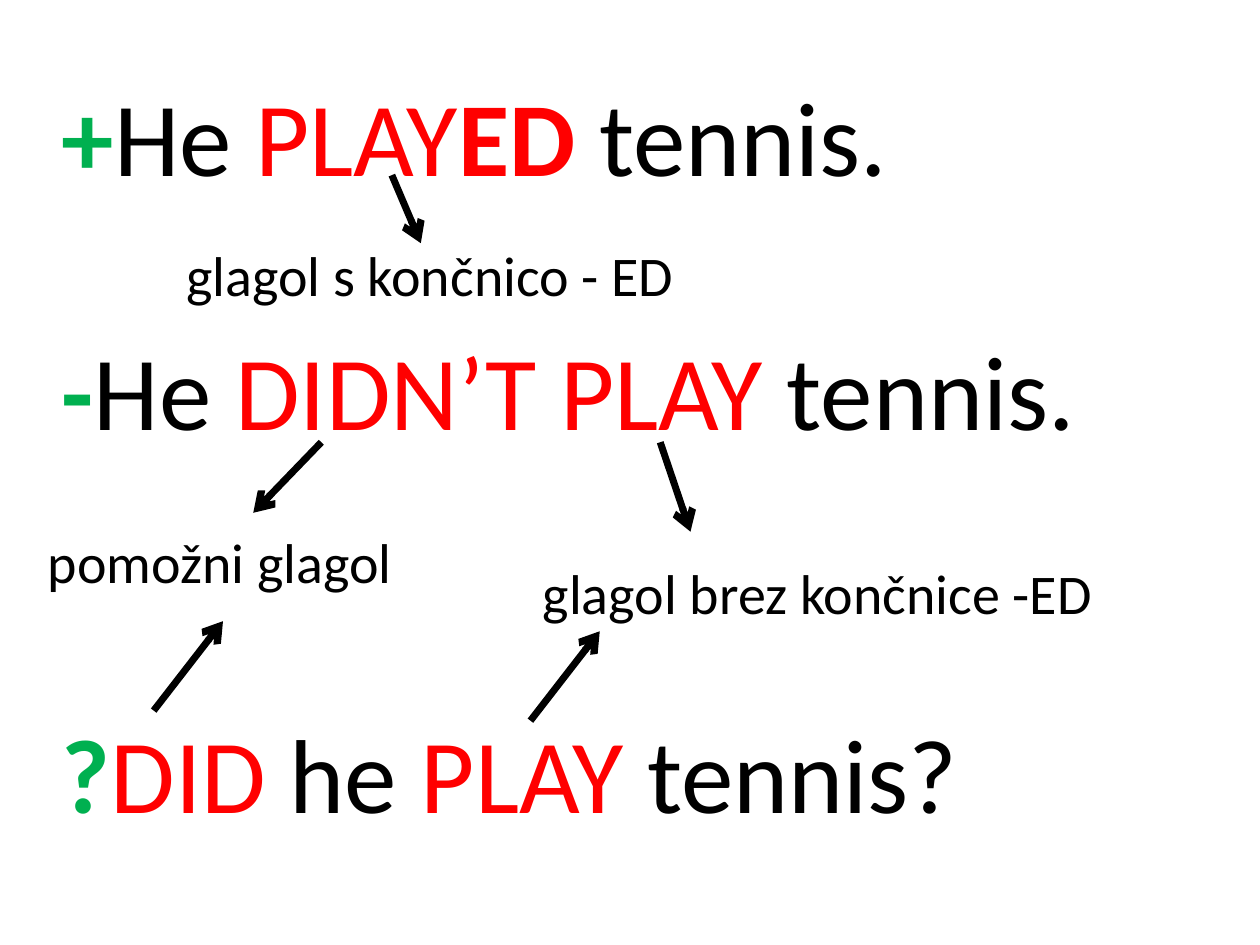
from typing import NamedTuple

from lxml.etree import SubElement
from pptx import Presentation
from pptx.dml.color import RGBColor
from pptx.enum.shapes import MSO_CONNECTOR as Connector
from pptx.enum.text import MSO_ANCHOR as Anchor, MSO_AUTO_SIZE as AutoSize
from pptx.oxml.ns import qn
from pptx.util import Inches, Pt

COLORS = {"text": "000000", "sign": "00B050", "verb": "FF0000"}
FONT = "Calibri"
SENTENCE_LINE = 73.2


class Phrase(NamedTuple):
    text: str
    color: str = "text"
    bold: bool = False


class Sentence(NamedTuple):
    phrases: list[Phrase]
    lines_before: int


class Label(NamedTuple):
    text: str
    left: float
    top: float
    width: float


class Arrow(NamedTuple):
    start: tuple[float, float]
    end: tuple[float, float]


SENTENCES = [
    Sentence([Phrase("+", "sign", True), Phrase("He "), Phrase("PLAY", "verb"),
              Phrase("ED ", "verb", True), Phrase("tennis.")], 0),
    Sentence([Phrase("-", "sign", True), Phrase("He "),
              Phrase("DIDN’T PLAY ", "verb"), Phrase("tennis.")], 1),
    Sentence([Phrase("?", "sign", True), Phrase("DID ", "verb"), Phrase("he "),
              Phrase("PLAY ", "verb"), Phrase("tennis?")], 2),
]
LABELS = [
    Label("glagol s končnico - ED", 1.38, 1.86, 5.98),
    Label("pomožni glagol", 0.28, 4.14, 3.62),
    Label("glagol brez končnice -ED", 4.21, 4.38, 5.59),
]
ARROWS = [
    Arrow((3.11, 1.39), (3.34, 1.93)),
    Arrow((2.55, 3.51), (2.01, 4.07)),
    Arrow((5.24, 3.51), (5.48, 4.22)),
    Arrow((1.22, 5.64), (1.77, 4.93)),
    Arrow((4.21, 5.72), (4.76, 5.01)),
]


def color(name: str) -> RGBColor:
    return RGBColor.from_string(COLORS[name])


def fill_sentences(body, sentences: list[Sentence]) -> None:
    body.left, body.top = Inches(0.2), Inches(0.52)
    body.width, body.height = Inches(9.41), Inches(6.16)
    frame = body.text_frame
    frame.auto_size = AutoSize.NONE
    frame.vertical_anchor = Anchor.TOP
    frame.margin_left = Inches(0.29)
    for index, sentence in enumerate(sentences):
        paragraph = frame.add_paragraph() if index else frame.paragraphs[0]
        paragraph.space_before = Pt(sentence.lines_before * SENTENCE_LINE)
        paragraph.font.size = Pt(60)
        paragraph.font.name = FONT
        properties = paragraph._p.get_or_add_pPr()
        properties.set("marL", "0")
        properties.set("indent", "0")
        properties.insert_element_before(
            properties.makeelement(qn("a:buNone")), "a:tabLst", "a:defRPr", "a:extLst")
        for phrase in sentence.phrases:
            run = paragraph.add_run()
            run.text = phrase.text
            run.font.bold = phrase.bold
            run.font.color.rgb = color(phrase.color)


def add_label(slide, label: Label) -> None:
    box = slide.shapes.add_textbox(
        Inches(label.left), Inches(label.top), Inches(label.width), Inches(0.64))
    frame = box.text_frame
    frame.word_wrap = True
    paragraph = frame.paragraphs[0]
    paragraph.text = label.text
    paragraph.font.size = Pt(32)
    paragraph.font.name = FONT
    paragraph.font.color.rgb = color("text")


def add_arrow(slide, arrow: Arrow) -> None:
    points = [Inches(value) for value in (*arrow.start, *arrow.end)]
    connector = slide.shapes.add_connector(Connector.STRAIGHT, *points)
    connector.line.color.rgb = color("text")
    connector.line.width = Pt(4)
    SubElement(connector.line._get_or_add_ln(), qn("a:tailEnd"), type="arrow")
    SubElement(connector._element.spPr, qn("a:effectLst"))


def main() -> None:
    presentation = Presentation()
    presentation.slide_width, presentation.slide_height = Inches(10), Inches(7.5)
    slide = presentation.slides.add_slide(presentation.slide_layouts[1])
    title = slide.shapes.title.element
    title.getparent().remove(title)
    fill_sentences(slide.placeholders[1], SENTENCES)
    for label in LABELS:
        add_label(slide, label)
    for arrow in ARROWS:
        add_arrow(slide, arrow)
    presentation.save("out.pptx")


if __name__ == "__main__":
    main()
